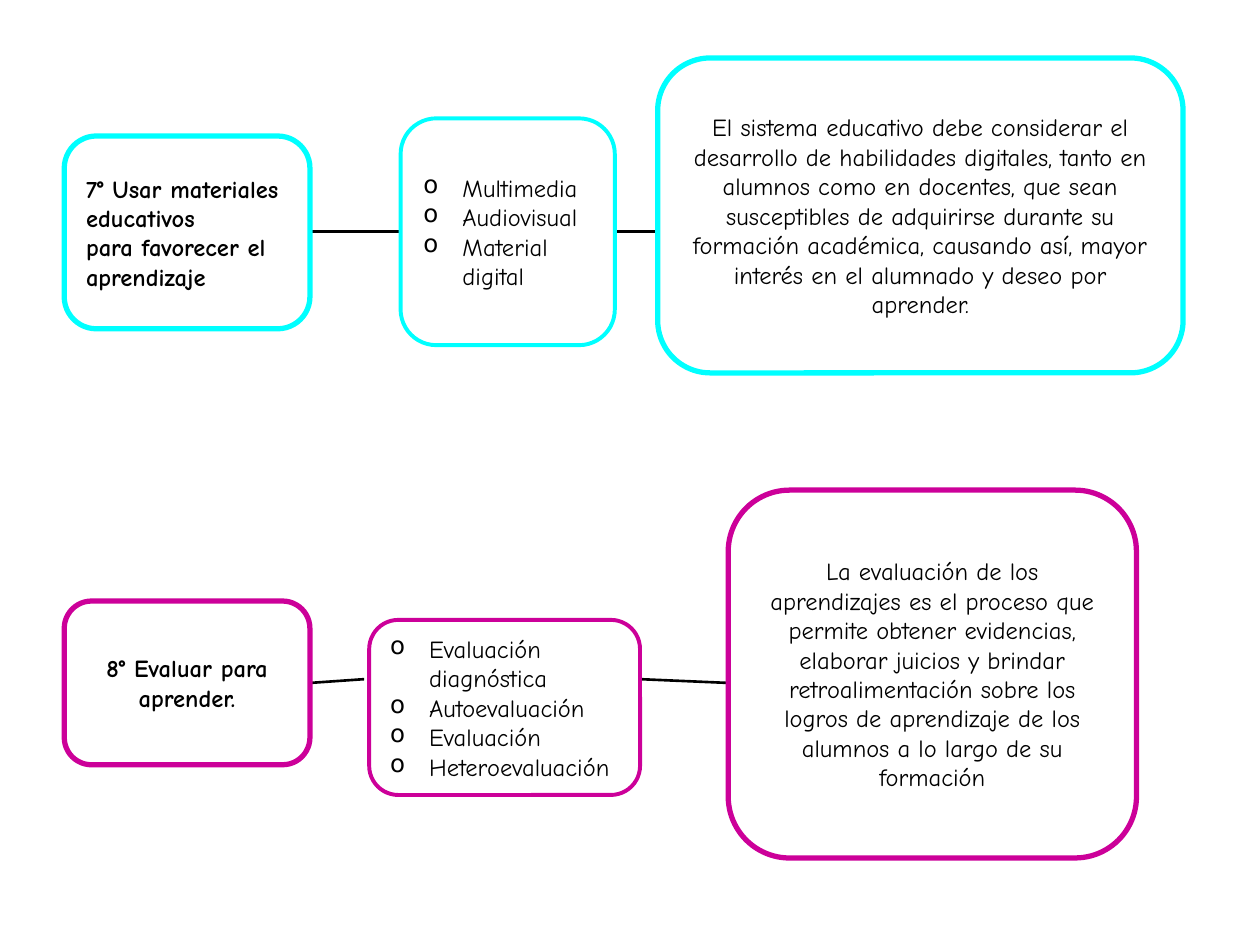
from lxml.etree import SubElement
from pptx import Presentation
from pptx.dml.color import RGBColor
from pptx.enum.shapes import MSO_CONNECTOR, MSO_SHAPE
from pptx.enum.text import MSO_ANCHOR, PP_ALIGN
from pptx.oxml.ns import qn
from pptx.util import Inches, Pt

COLOURS = {"white": "FFFFFF", "black": "000000", "cyan": "00FFFF", "magenta": "CC0099"}
FONT = "Comic Neue"
INDENT = Inches(0.31)

deck = Presentation()
deck.slide_width, deck.slide_height = Inches(10), Inches(7.5)
page = deck.slides.add_slide(deck.slide_layouts[6])


def place(x, y):
    """Turn percentages of the slide's width and height into lengths."""
    return int(deck.slide_width * x / 100), int(deck.slide_height * y / 100)


def add_box(area, colour, lines, style):
    left, top, width, height = area
    box = page.shapes.add_shape(
        MSO_SHAPE.ROUNDED_RECTANGLE, *place(left, top), *place(width, height))
    box.shadow.inherit = False
    box.fill.solid()
    box.fill.fore_color.rgb = RGBColor.from_string(COLOURS["white"])
    box.line.color.rgb = RGBColor.from_string(COLOURS[colour])
    box.line.width = Pt(2.25 if style == "list" else 3)
    frame = box.text_frame
    frame.word_wrap = True
    frame.vertical_anchor = MSO_ANCHOR.MIDDLE
    frame.text = "\n".join(lines)
    for para in frame.paragraphs:
        para.alignment = PP_ALIGN.CENTER if style.endswith("centred") else PP_ALIGN.LEFT
        if style == "list":
            properties = para._p.get_or_add_pPr()
            properties.set("marL", str(INDENT))
            properties.set("indent", str(-INDENT))
            SubElement(properties, qn("a:buChar")).set("char", "o")
        para.font.name = FONT
        para.font.size = Pt(14)
        para.font.bold = style.startswith("bold")
        para.font.color.rgb = RGBColor.from_string(COLOURS["black"])


# Connecting lines, behind the boxes: start and end in percent of the slide
links = [
    (24.6, 24.53, 31.8, 24.53),
    (48.8, 24.53, 60.3, 24.53),
    (24.6, 72.27, 28.9, 71.87),
    (50.8, 71.87, 57.8, 72.27),
]
for x1, y1, x2, y2 in links:
    link = page.shapes.add_connector(MSO_CONNECTOR.STRAIGHT, *place(x1, y1), *place(x2, y2))
    link.line.color.rgb = RGBColor.from_string(COLOURS["black"])
    link.line.width = Pt(1.5)
    SubElement(link._element.spPr, qn("a:effectLst"))

# Principle 7: heading, means, explanation
add_box((5.1, 14.4, 19.5, 20.4), "cyan",
        ["7° Usar materiales educativos", "para favorecer el aprendizaje"], "bold")
add_box((31.8, 12.53, 17, 24), "cyan",
        ["Multimedia", "Audiovisual", "Material digital"], "list")
add_box((52.2, 6.13, 41.7, 33.33), "cyan",
        ["El sistema educativo debe considerar el desarrollo de habilidades digitales, "
         "tanto en alumnos como en docentes, que sean susceptibles de adquirirse durante "
         "su formación académica, causando así, mayor interés en el alumnado y deseo por "
         "aprender."], "centred")

# Principle 8: heading, kinds of assessment, explanation
add_box((5.1, 63.6, 19.5, 17.33), "magenta", ["8° Evaluar para aprender."], "bold centred")
add_box((29.3, 65.6, 21.5, 18.53), "magenta",
        ["Evaluación diagnóstica", "Autoevaluación", "Evaluación", "Heteroevaluación"], "list")
add_box((57.8, 51.87, 32.4, 38.93), "magenta",
        ["La evaluación de los aprendizajes es el proceso que permite obtener evidencias, "
         "elaborar juicios y brindar retroalimentación sobre los logros de aprendizaje de "
         "los alumnos a lo largo de su formación"], "centred")

deck.save("out.pptx")
